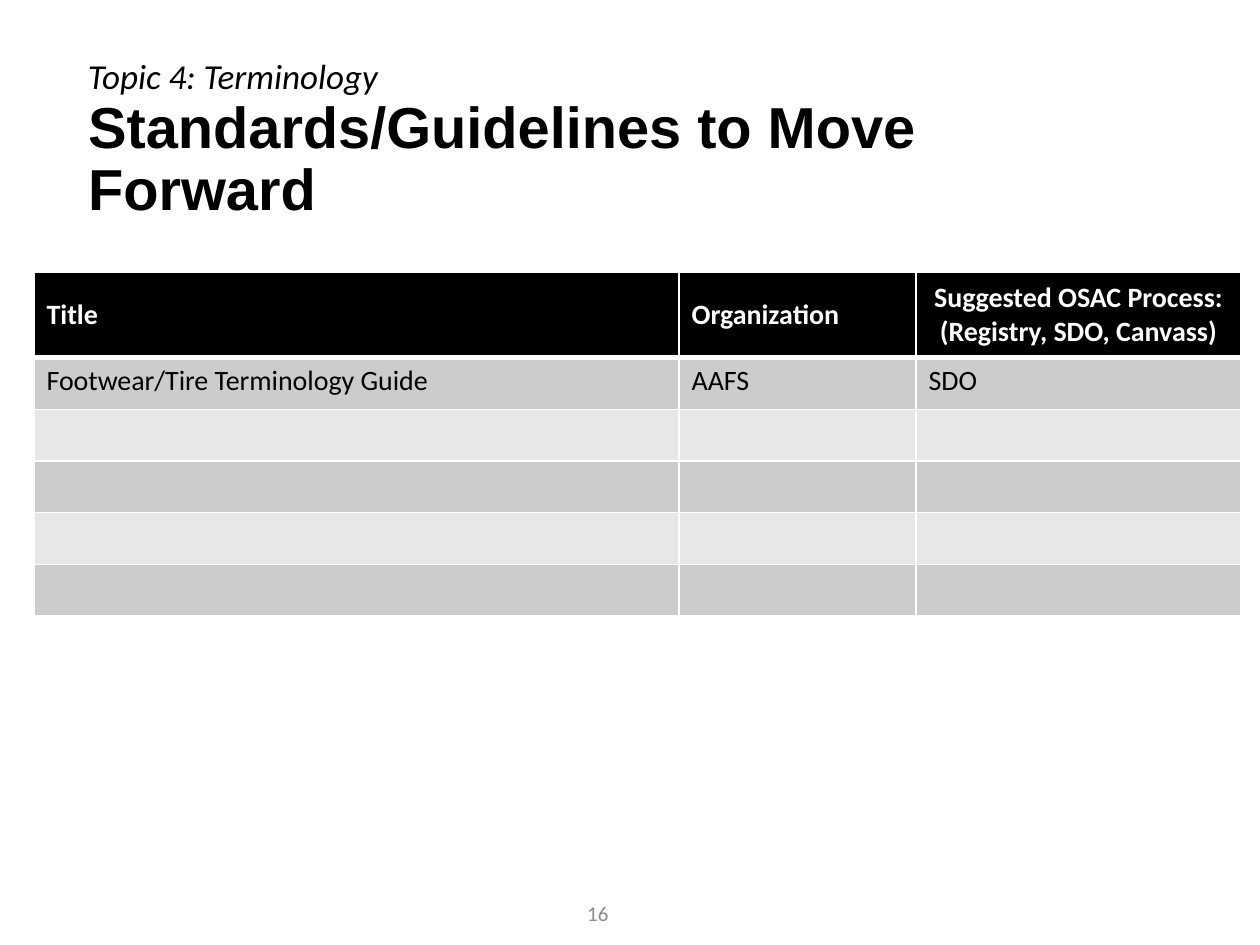
from lxml import etree
from pptx import Presentation
from pptx import util as u
from pptx.dml.color import RGBColor
from pptx.enum import text
from pptx.oxml import ns

BLACK = RGBColor(0x00, 0x00, 0x00)
WHITE = RGBColor(0xFF, 0xFF, 0xFF)
DARK_BAND = RGBColor(0xCC, 0xCC, 0xCC)
LIGHT_BAND = RGBColor(0xE7, 0xE7, 0xE7)
PAGE_GRAY = RGBColor(0x8C, 0x8C, 0x8C)

HEADERS = ["Title", "Organization", "Suggested OSAC Process: (Registry, SDO, Canvass)"]
GUIDES = [["Footwear/Tire Terminology Guide", "AAFS", "SDO"]] + [[""] * 3] * 4
COLUMN_WIDTHS = [5.12, 1.88, 2.58]
ROW_HEIGHTS = [0.68] + [0.41] * 5


def write_text(frame, content, size=16, font="Calibri", color=BLACK, bold=False,
               italic=False, align=text.PP_ALIGN.LEFT, spacing=None):
    paragraph = frame.paragraphs[0]
    paragraph.alignment = align
    paragraph.line_spacing = spacing
    target = paragraph.font
    if content:
        run = paragraph.add_run()
        run.text = content
        target = run.font
    target.size = u.Pt(size)
    target.name = font
    target.bold = bold
    target.italic = italic
    target.color.rgb = color


def add_title(slide, content):
    title = slide.shapes.title
    title.left, title.top = u.Inches(0.6), u.Inches(0.55)
    title.width, title.height = u.Inches(8.62), u.Inches(1.45)
    frame = title.text_frame
    frame.word_wrap = True
    frame.auto_size = text.MSO_AUTO_SIZE.NONE
    frame.vertical_anchor = text.MSO_ANCHOR.MIDDLE
    write_text(frame, content, size=33, font="Arial", bold=True, spacing=0.9)


def add_label(slide, content, left, top, width, height,
              anchor=text.MSO_ANCHOR.TOP, **style):
    box = slide.shapes.add_textbox(
        u.Inches(left), u.Inches(top), u.Inches(width), u.Inches(height))
    frame = box.text_frame
    frame.word_wrap = True
    frame.vertical_anchor = anchor
    write_text(frame, content, **style)


def set_borders(cell, top=1, bottom=1):
    properties = cell._tc.get_or_add_tcPr()
    for side, points in (("L", 1), ("R", 1), ("T", top), ("B", bottom)):
        line = etree.SubElement(properties, ns.qn(f"a:ln{side}"), w=str(u.Pt(points)))
        fill = etree.SubElement(line, ns.qn("a:solidFill"))
        etree.SubElement(fill, ns.qn("a:srgbClr"), val=str(WHITE))


def format_cell(cell, content, fill, anchor=text.MSO_ANCHOR.TOP, top=1, bottom=1, **style):
    set_borders(cell, top, bottom)
    cell.fill.solid()
    cell.fill.fore_color.rgb = fill
    cell.vertical_anchor = anchor
    write_text(cell.text_frame, content, **style)


def add_guides_table(slide):
    table = slide.shapes.add_table(
        len(ROW_HEIGHTS), len(COLUMN_WIDTHS), u.Inches(0.27), u.Inches(2.16),
        u.Inches(sum(COLUMN_WIDTHS)), u.Inches(sum(ROW_HEIGHTS))).table
    for column, width in zip(table.columns, COLUMN_WIDTHS):
        column.width = u.Inches(width)
    for row, height in zip(table.rows, ROW_HEIGHTS):
        row.height = u.Inches(height)
    for column, header in enumerate(HEADERS):
        align = text.PP_ALIGN.CENTER if column == 2 else text.PP_ALIGN.LEFT
        format_cell(table.cell(0, column), header, BLACK, text.MSO_ANCHOR.MIDDLE,
                    bottom=3, color=WHITE, bold=True, align=align)
    for row, guide in enumerate(GUIDES, start=1):
        band = DARK_BAND if row % 2 else LIGHT_BAND
        for column, content in enumerate(guide):
            format_cell(table.cell(row, column), content, band, top=3 if row == 1 else 1)


def main():
    presentation = Presentation()
    presentation.slide_width = u.Inches(10)
    presentation.slide_height = u.Inches(7.5)
    slide = presentation.slides.add_slide(presentation.slide_layouts[5])
    add_title(slide, "Standards/Guidelines to Move Forward")
    add_guides_table(slide)
    add_label(slide, "Topic 4: Terminology", 0.6, 0.38, 4.36, 0.44, size=20, italic=True)
    add_label(slide, "16", 3.62, 7.05, 2.25, 0.4, text.MSO_ANCHOR.MIDDLE,
              size=12, color=PAGE_GRAY, align=text.PP_ALIGN.CENTER)
    presentation.save("out.pptx")


if __name__ == "__main__":
    main()
